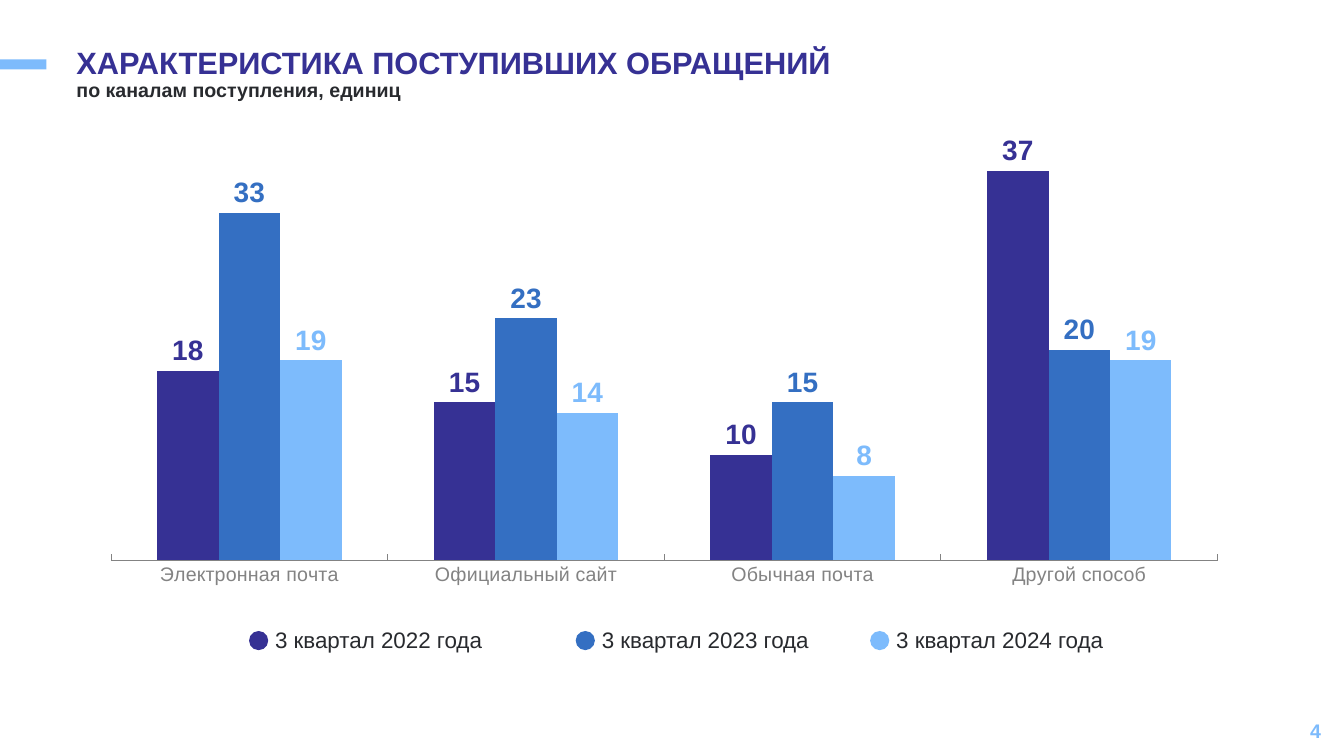
"""Build a slide with a clustered column chart of received requests by channel."""
from lxml import etree
from pptx import Presentation
from pptx.chart.data import CategoryChartData
from pptx.dml.color import RGBColor
from pptx.enum.chart import XL_CHART_TYPE, XL_LABEL_POSITION, XL_TICK_MARK
from pptx.enum.shapes import MSO_SHAPE
from pptx.enum.text import MSO_ANCHOR, PP_ALIGN
from pptx.oxml.ns import qn
from pptx.util import Inches, Pt

COLUMNS = XL_CHART_TYPE.COLUMN_CLUSTERED
OUTSIDE_END = XL_LABEL_POSITION.OUTSIDE_END
TICK_INSIDE, TICK_NONE = XL_TICK_MARK.INSIDE, XL_TICK_MARK.NONE
OVAL, RECTANGLE = MSO_SHAPE.OVAL, MSO_SHAPE.RECTANGLE
TOP, MIDDLE = MSO_ANCHOR.TOP, MSO_ANCHOR.MIDDLE
LEFT, RIGHT = PP_ALIGN.LEFT, PP_ALIGN.RIGHT

FONT = "Arial"
COLORS = {
    "indigo": "363194",
    "blue": "346FC2",
    "sky": "7DBBFC",
    "ink": "282A2E",
    "gray": "838383",
}
CHANNELS = ["Электронная почта", "Официальный сайт", "Обычная почта", "Другой способ"]
QUARTERS = [
    ("3 квартал 2022 года", "indigo", [18, 15, 10, 37], 2.47),
    ("3 квартал 2023 года", "blue", [33, 23, 15, 20], 5.71),
    ("3 квартал 2024 года", "sky", [19, 14, 8, 19], 8.63),
]
PLOT_LAYOUT = {
    "layoutTarget": "inner", "xMode": "edge", "yMode": "edge",
    "x": 0.022, "y": 0.024, "w": 0.956, "h": 0.871,
}


def rgb(color):
    """Return the named colour."""
    return RGBColor.from_string(COLORS[color])


def style_font(font, size, color, bold=False):
    """Set the typeface, size, colour and weight of a font."""
    font.name = FONT
    font.size = Pt(size)
    font.bold = bold
    font.color.rgb = rgb(color)


def add_text(page, text, place, size, color, bold=False, align=LEFT,
             anchor=TOP, wrap=True, spacing=1.0):
    """Add a one-paragraph text box."""
    box = page.shapes.add_textbox(*map(Inches, place))
    frame = box.text_frame
    frame.text = text
    frame.word_wrap = wrap
    frame.vertical_anchor = anchor
    para = frame.paragraphs[0]
    para.alignment = align
    para.line_spacing = spacing
    style_font(para.runs[0].font, size, color, bold)


def add_filled(page, preset, place, color):
    """Add a plain filled shape without an outline."""
    shape = page.shapes.add_shape(preset, *map(Inches, place))
    shape.shadow.inherit = False
    shape.fill.solid()
    shape.fill.fore_color.rgb = rgb(color)
    shape.line.fill.background()


def set_plot_layout(chart):
    """Fix the inner plot area inside the chart frame."""
    plot_area = chart.plots[0]._element.getparent()
    layout = plot_area.find(qn("c:layout"))
    if layout is None:
        layout = etree.Element(qn("c:layout"))
        plot_area.insert(0, layout)
    manual = etree.SubElement(layout, qn("c:manualLayout"))
    for tag, value in PLOT_LAYOUT.items():
        etree.SubElement(manual, qn(f"c:{tag}")).set("val", str(value))


def add_column_chart(page, place):
    """Add the column chart of requests by channel and quarter."""
    data = CategoryChartData()
    data.categories = CHANNELS
    for name, color, values, left in QUARTERS:
        data.add_series(name, values)
    chart = page.shapes.add_chart(COLUMNS, *map(Inches, place), data).chart
    chart.has_legend = False
    chart.has_title = False
    style_font(chart.font, 18, "ink")

    plot = chart.plots[0]
    plot.gap_width = 150
    plot.overlap = 0
    plot.vary_by_categories = False
    for series, (name, color, values, left) in zip(plot.series, QUARTERS):
        series.format.fill.solid()
        series.format.fill.fore_color.rgb = rgb(color)
        labels = series.data_labels
        labels.show_value = True
        labels.position = OUTSIDE_END
        style_font(labels.font, 20, color, bold=True)

    channel_axis = chart.category_axis
    channel_axis.major_tick_mark = TICK_INSIDE
    channel_axis.minor_tick_mark = TICK_NONE
    channel_axis.format.line.color.rgb = rgb("gray")
    channel_axis.format.line.width = Pt(0.75)
    style_font(channel_axis.tick_labels.font, 14, "gray")

    value_axis = chart.value_axis
    value_axis.minimum_scale = 0
    value_axis.maximum_scale = 40
    value_axis.has_major_gridlines = False
    value_axis.visible = False
    set_plot_layout(chart)


def add_legend_entry(page, label, color, left):
    """Add a coloured dot with its quarter label."""
    add_filled(page, OVAL, (left, 6.26, 0.19, 0.19), color)
    add_text(page, label, (left + 0.16, 6.16, 2.28, 0.37), 16, "ink", wrap=False)


def main():
    """Build and save the slide."""
    deck = Presentation()
    deck.slide_width = Inches(13.33)
    deck.slide_height = Inches(7.5)
    page = deck.slides.add_slide(deck.slide_layouts[6])

    add_filled(page, RECTANGLE, (0, 0.59, 0.46, 0.1), "sky")
    add_text(page, "4", (10.2, 7.05, 3, 0.4), 14, "sky", bold=True,
             align=RIGHT, anchor=MIDDLE)
    add_text(page, "ХАРАКТЕРИСТИКА ПОСТУПИВШИХ ОБРАЩЕНИЙ",
             (0.66, 0.43, 8.66, 0.57), 22, "indigo", bold=True, spacing=0.9)
    add_text(page, "по каналам поступления, единиц",
             (0.66, 0.75, 8.66, 0.4), 14, "ink", bold=True, spacing=0.9)
    add_column_chart(page, (0.85, 1.27, 11.48, 4.79))
    for label, color, values, left in QUARTERS:
        add_legend_entry(page, label, color, left)

    deck.save("out.pptx")


if __name__ == "__main__":
    main()
